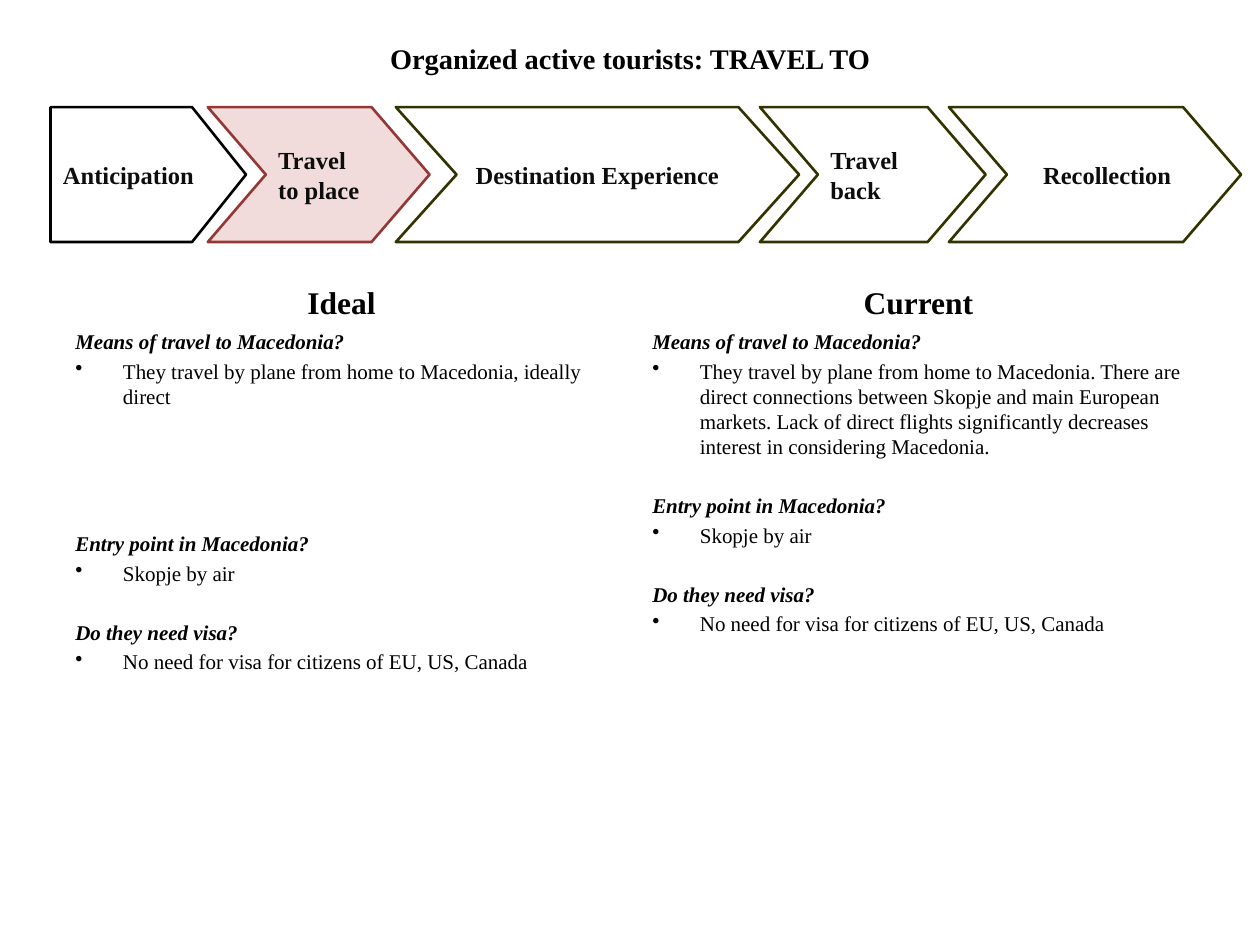
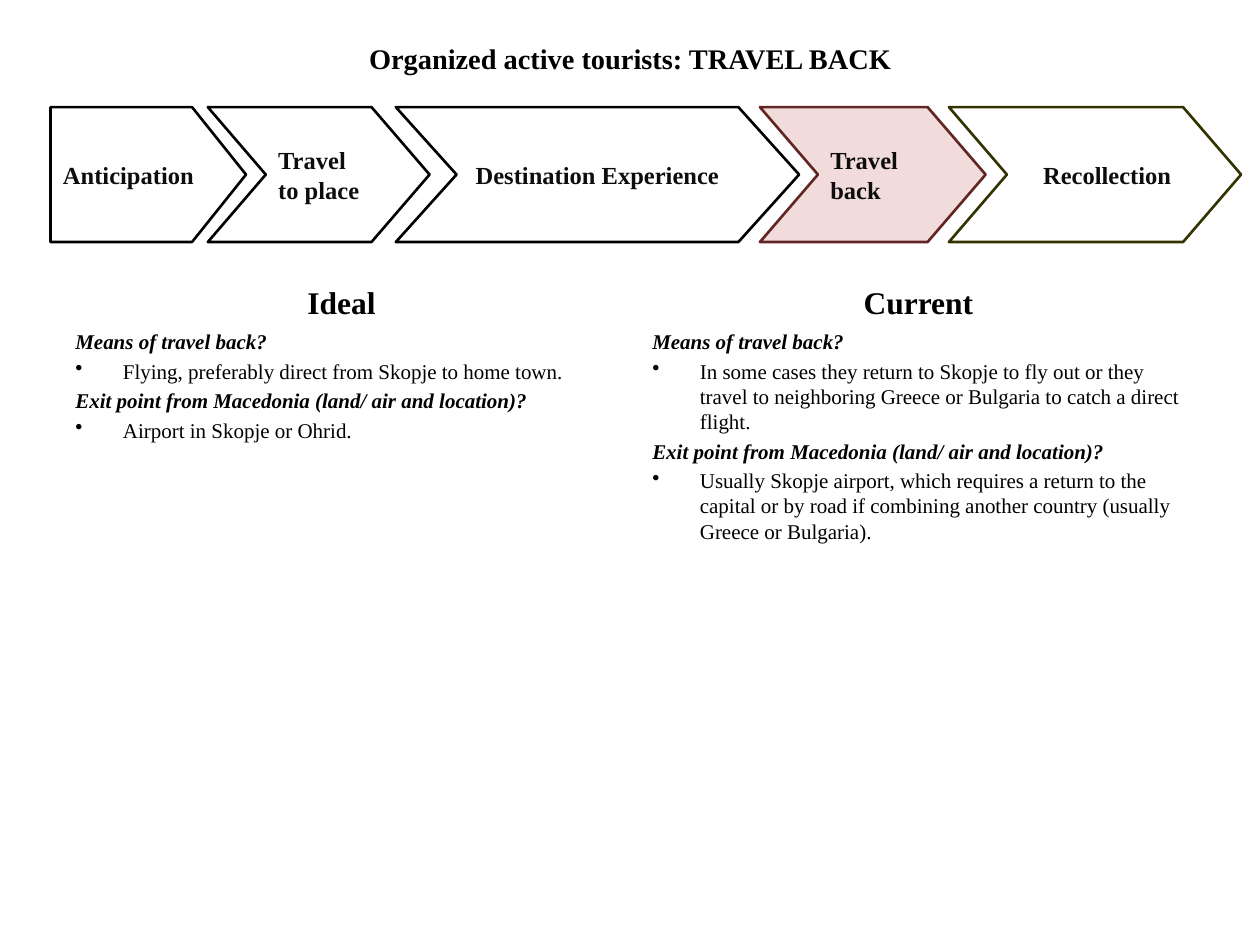
from dataclasses import dataclass

from lxml.etree import SubElement
from pptx import Presentation
from pptx.dml.color import RGBColor
from pptx.enum.shapes import MSO_SHAPE
from pptx.enum.text import MSO_ANCHOR, MSO_AUTO_SIZE, PP_ALIGN
from pptx.oxml.ns import qn
from pptx.util import Cm, Pt


@dataclass(frozen=True)
class Theme:
    font: str = "Times New Roman"
    black: str = "000000"
    white: str = "FFFFFF"
    step_text: str = "0D0D0D"
    ahead_line: str = "333300"
    current_fill: str = "F2DCDB"
    title_size: float = 16.2
    heading_size: float = 18
    step_size: float = 14
    body_size: float = 12
    paragraph_gap: float = 2.5
    blank_line: float = 16.8
    step_line: float = 1.5


THEME = Theme()

# Layout in centimetres
TITLE_BOX = (1.27, 0.76, 22.86, 0.84)
STEP_TOP, STEP_HEIGHT = 2.16, 2.72
COLUMN_LEFTS = {"Ideal": 1.27, "Current": 12.9}
COLUMN_WIDTH = 11.23
HEADING_TOP, HEADING_HEIGHT = 5.33, 1.27
ANSWERS_TOP, ANSWERS_HEIGHT = 6.5, 12.09
BULLET_INDENT = 0.96
INSET, TIGHT_INSET = 0.25, 0.13

# Journey steps: label, outline, left, width, point depth, alignment, left inset
JOURNEY = [
    ("Anticipation", MSO_SHAPE.PENTAGON, 1.02, 3.94, 0.4, PP_ALIGN.LEFT, INSET),
    ("Travel to place", MSO_SHAPE.CHEVRON, 4.19, 4.47, 0.43, PP_ALIGN.LEFT, INSET),
    ("Destination Experience", MSO_SHAPE.CHEVRON, 7.98, 8.13, 0.45, PP_ALIGN.CENTER, INSET),
    ("Travel back", MSO_SHAPE.CHEVRON, 15.32, 4.55, 0.43, PP_ALIGN.LEFT, INSET),
    ("Recollection", MSO_SHAPE.CHEVRON, 19.13, 5.89, 0.43, PP_ALIGN.LEFT, 0.73),
]

MEANS_TO = "Means of travel to Macedonia?"
ENTRY = "Entry point in Macedonia?"
VISA = "Do they need visa?"
MEANS_BACK = "Means of travel back?"
EXIT = "Exit point from Macedonia (land/ air and location)?"
BY_AIR = "Skopje by air"
NO_VISA = "No need for visa for citizens of EU, US, Canada"

# Each answer: question, reply, blank lines left above the question
SLIDES = [
    {
        "title": "Organized active tourists: TRAVEL TO",
        "current": "Travel to place",
        "current_line": "953735",
        "columns": {
            "Ideal": [
                (MEANS_TO, "They travel by plane from home to Macedonia, ideally direct", 0),
                (ENTRY, BY_AIR, 4),
                (VISA, NO_VISA, 1),
            ],
            "Current": [
                (MEANS_TO, "They travel by plane from home to Macedonia. There are direct "
                 "connections between Skopje and main European markets. Lack of direct "
                 "flights significantly decreases interest in considering Macedonia.", 0),
                (ENTRY, BY_AIR, 1),
                (VISA, NO_VISA, 1),
            ],
        },
    },
    {
        "title": "Organized active tourists: TRAVEL BACK",
        "current": "Travel back",
        "current_line": "632523",
        "columns": {
            "Ideal": [
                (MEANS_BACK, "Flying, preferably direct from Skopje to home town.", 0),
                (EXIT, "Airport in Skopje or Ohrid.", 0),
            ],
            "Current": [
                (MEANS_BACK, "In some cases they return to Skopje to fly out or they travel to "
                 "neighboring Greece or Bulgaria to catch a direct flight.", 0),
                (EXIT, "Usually Skopje airport, which requires a return to the capital or by "
                 "road if combining another country (usually Greece or Bulgaria).", 0),
            ],
        },
    },
]


def apply(target, formats):
    for attribute, value in formats.items():
        setattr(target, attribute, value)


def write(paragraph, text, size, color=THEME.black, align=PP_ALIGN.LEFT, bold=True, italic=False):
    run = paragraph.add_run()
    run.text = text
    paragraph.alignment = align
    apply(run.font, {"name": THEME.font, "size": Pt(size), "bold": bold, "italic": italic})
    run.font.color.rgb = RGBColor.from_string(color)


def add_bullet(paragraph):
    properties = paragraph._p.get_or_add_pPr()
    properties.set("marL", str(Cm(BULLET_INDENT)))
    properties.set("indent", str(-Cm(BULLET_INDENT)))
    SubElement(properties, qn("a:buChar")).set("char", "•")


def add_title(slide, text):
    title = slide.shapes.title
    apply(title, dict(zip(("left", "top", "width", "height"), map(Cm, TITLE_BOX))))
    apply(title.text_frame, {"vertical_anchor": MSO_ANCHOR.MIDDLE,
                             "auto_size": MSO_AUTO_SIZE.NONE, "word_wrap": True})
    write(title.text_frame.paragraphs[0], text, THEME.title_size, align=PP_ALIGN.CENTER)


def add_step(slide, step, fill, line):
    label, outline, left, width, depth, align, inset = step
    arrow = slide.shapes.add_shape(outline, Cm(left), Cm(STEP_TOP), Cm(width), Cm(STEP_HEIGHT))
    arrow.adjustments[0] = depth
    arrow.shadow.inherit = False
    if fill:
        arrow.fill.solid()
        arrow.fill.fore_color.rgb = RGBColor.from_string(fill)
    else:
        arrow.fill.background()
    arrow.line.color.rgb = RGBColor.from_string(line)
    arrow.line.width = Pt(THEME.step_line)
    right_inset = INSET if align == PP_ALIGN.CENTER else TIGHT_INSET
    apply(arrow.text_frame, {"word_wrap": True, "vertical_anchor": MSO_ANCHOR.MIDDLE,
                             "margin_left": Cm(inset), "margin_right": Cm(right_inset)})
    write(arrow.text_frame.paragraphs[0], label, THEME.step_size, THEME.step_text, align)


def add_journey(slide, current, current_line):
    """Outline past steps, highlight the current one, and fill those ahead."""
    fill, line = None, THEME.black
    for step in JOURNEY:
        if step[0] == current:
            add_step(slide, step, THEME.current_fill, current_line)
            fill, line = THEME.white, THEME.ahead_line
        else:
            add_step(slide, step, fill, line)


def add_text_area(slide, left, top, height, anchor):
    area = slide.shapes.add_textbox(Cm(left), Cm(top), Cm(COLUMN_WIDTH), Cm(height))
    apply(area.text_frame, {"word_wrap": True, "vertical_anchor": anchor})
    return area.text_frame


def add_column(slide, heading, answers):
    left = COLUMN_LEFTS[heading]
    heading_area = add_text_area(slide, left, HEADING_TOP, HEADING_HEIGHT, MSO_ANCHOR.BOTTOM)
    write(heading_area.paragraphs[0], heading, THEME.heading_size, align=PP_ALIGN.CENTER)

    answer_area = add_text_area(slide, left, ANSWERS_TOP, ANSWERS_HEIGHT, MSO_ANCHOR.TOP)
    for index, (question, reply, blank_lines) in enumerate(answers):
        if index:
            asked = answer_area.add_paragraph()
            asked.space_before = Pt(THEME.paragraph_gap + blank_lines * THEME.blank_line)
        else:
            asked = answer_area.paragraphs[0]
        write(asked, question, THEME.body_size, italic=True)
        replied = answer_area.add_paragraph()
        replied.space_before = Pt(THEME.paragraph_gap)
        write(replied, reply, THEME.body_size, bold=False)
        add_bullet(replied)


def main():
    deck = Presentation()
    apply(deck, {"slide_width": Cm(25.4), "slide_height": Cm(19.05)})
    title_only = deck.slide_layouts[5]
    for content in SLIDES:
        slide = deck.slides.add_slide(title_only)
        add_title(slide, content["title"])
        for heading, answers in content["columns"].items():
            add_column(slide, heading, answers)
        add_journey(slide, content["current"], content["current_line"])
    deck.save("out.pptx")


if __name__ == "__main__":
    main()
